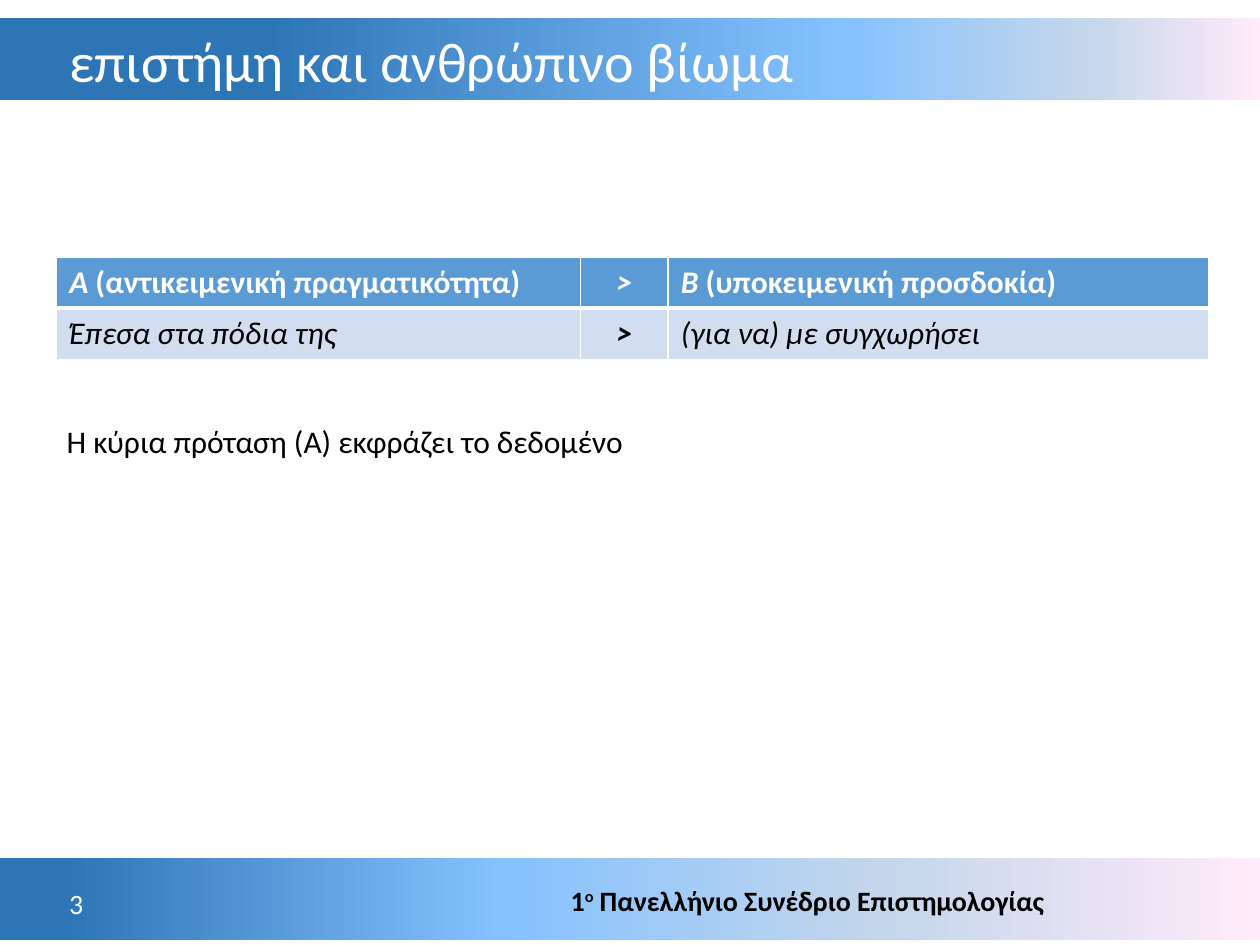
import pptx
import pptx.dml.color
import pptx.enum.shapes
import pptx.enum.text
import pptx.oxml
import pptx.oxml.ns
import pptx.util

ALIGN = pptx.enum.text.PP_ALIGN
ANCHOR = pptx.enum.text.MSO_ANCHOR
WIDTH, HEIGHT = 10, 7.5
FONT = "Calibri"
WHITE, BLACK = "FFFFFF", "000000"
BAND_COLOURS = ["2E75B6", "85C2FF", "C4D6EB", "FFEBFA"]


def colour(value):
    return pptx.dml.color.RGBColor.from_string(value)


def share(box):
    left, top, width, height = box
    return [pptx.util.Inches(part) for part in
            (left * WIDTH, top * HEIGHT, width * WIDTH, height * HEIGHT)]


def inside(box, left, top, width, height):
    return (box[0] + left * box[2], box[1] + top * box[3],
            width * box[2], height * box[3])


def write_spans(para, texts, size, value, align=ALIGN.LEFT):
    para.alignment = align
    for text in texts:
        span = para.add_run()
        span.text = text
        span.font.name = FONT
        span.font.size = pptx.util.Pt(size)
        span.font.color.rgb = colour(value)
    return para.runs


def add_text(page, box, texts, size, value, align=ALIGN.LEFT, anchor=ANCHOR.MIDDLE, wrap=True):
    frame = page.shapes.add_textbox(*share(box)).text_frame
    frame.word_wrap = wrap
    frame.vertical_anchor = anchor
    if not wrap:
        frame.auto_size = pptx.enum.text.MSO_AUTO_SIZE.SHAPE_TO_FIT_TEXT
    return write_spans(frame.paragraphs[0], texts, size, value, align)


def add_band(page, box, positions):
    band = page.shapes.add_shape(pptx.enum.shapes.MSO_SHAPE.RECTANGLE, *share(box))
    band.shadow.inherit = False
    band.line.fill.background()
    band.fill.gradient()
    band.fill.gradient_angle = 0
    stops = band._element.spPr.find(".//" + pptx.oxml.ns.qn("a:gsLst"))
    stops.clear()
    for position, value in zip(positions, BAND_COLOURS):
        stops.append(pptx.oxml.parse_xml(
            f'<a:gs {pptx.oxml.ns.nsdecls("a")} pos="{position * 1000}">'
            f'<a:srgbClr val="{value}"/></a:gs>'))


def add_header(page, box, text):
    add_band(page, box, [21, 67, 86, 100])
    title = page.shapes.title
    page.shapes._spTree.append(title._element)
    title.left, title.top, title.width, title.height = share(inside(box, 0.045, 0.05, 0.887, 1.03))
    title.text_frame.vertical_anchor = ANCHOR.MIDDLE
    para = title.text_frame.paragraphs[0]
    para.line_spacing = 0.9
    write_spans(para, [text], 32, WHITE)


def add_footer(page, box, event, number):
    add_band(page, box, [5, 40, 70, 100])
    spans = add_text(page, inside(box, 0.113, 0.18, 0.726, 0.66), event, 16, BLACK, ALIGN.RIGHT)
    for span in spans:
        span.font.bold = True
    spans[1].font._element.set("baseline", "30000")
    add_text(page, inside(box, 0.045, 0.22, 0.047, 0.66), [number], 16, WHITE)


def set_borders(cell, bottom):
    properties = cell._tc.get_or_add_tcPr()
    for side, points in zip("LRTB", (1, 1, 1, bottom)):
        properties.append(pptx.oxml.parse_xml(
            f'<a:ln{side} {pptx.oxml.ns.nsdecls("a")} w="{points * 12700}">'
            f'<a:solidFill><a:srgbClr val="{WHITE}"/></a:solidFill></a:ln{side}>'))


def add_comparison(page, box, rows, column_shares):
    table = page.shapes.add_table(len(rows), len(column_shares), *share(box)).table
    for column, part in zip(table.columns, column_shares):
        column.width = pptx.util.Inches(part * box[2] * WIDTH)
    for r, row in enumerate(rows):
        header = r == 0
        for c, texts in enumerate(row):
            middle = c == 1
            cell = table.cell(r, c)
            set_borders(cell, 3 if header else 1)
            cell.fill.solid()
            cell.fill.fore_color.rgb = colour("5B9BD5" if header else "D2DEEF")
            spans = write_spans(cell.text_frame.paragraphs[0], texts, 18,
                                WHITE if header else BLACK,
                                ALIGN.CENTER if middle else ALIGN.LEFT)
            for index, span in enumerate(spans):
                span.font.bold = header or middle
                span.font.italic = index == 0


def main():
    deck = pptx.Presentation()
    deck.slide_width = pptx.util.Inches(WIDTH)
    deck.slide_height = pptx.util.Inches(HEIGHT)
    page = deck.slides.add_slide(deck.slide_layouts[5])
    band_height = 0.65 / HEIGHT
    add_footer(page, (0, 6.81 / HEIGHT, 1, band_height),
               ["1", "ο", " Πανελλήνιο Συνέδριο Επιστημολογίας"], "3")
    add_header(page, (0, 0.14 / HEIGHT, 1, band_height), "επιστήμη και ανθρώπινο βίωμα")
    add_comparison(page, (0.045, 0.272, 0.914, 0.108), [
        [["Α", " (αντικειμενική πραγματικότητα)"], [">"], ["Β", " (υποκειμενική προσδοκία)"]],
        [["Έπεσα στα πόδια της"], [">"], ["(για να) με συγχωρήσει"]],
    ], [0.455, 0.076, 0.469])
    add_text(page, (0.043, 0.44, 0.462, 0.053), ["Η κύρια πρόταση (Α) εκφράζει το δεδομένο"],
             18, BLACK, anchor=ANCHOR.TOP, wrap=False)
    deck.save("out.pptx")


if __name__ == "__main__":
    main()
